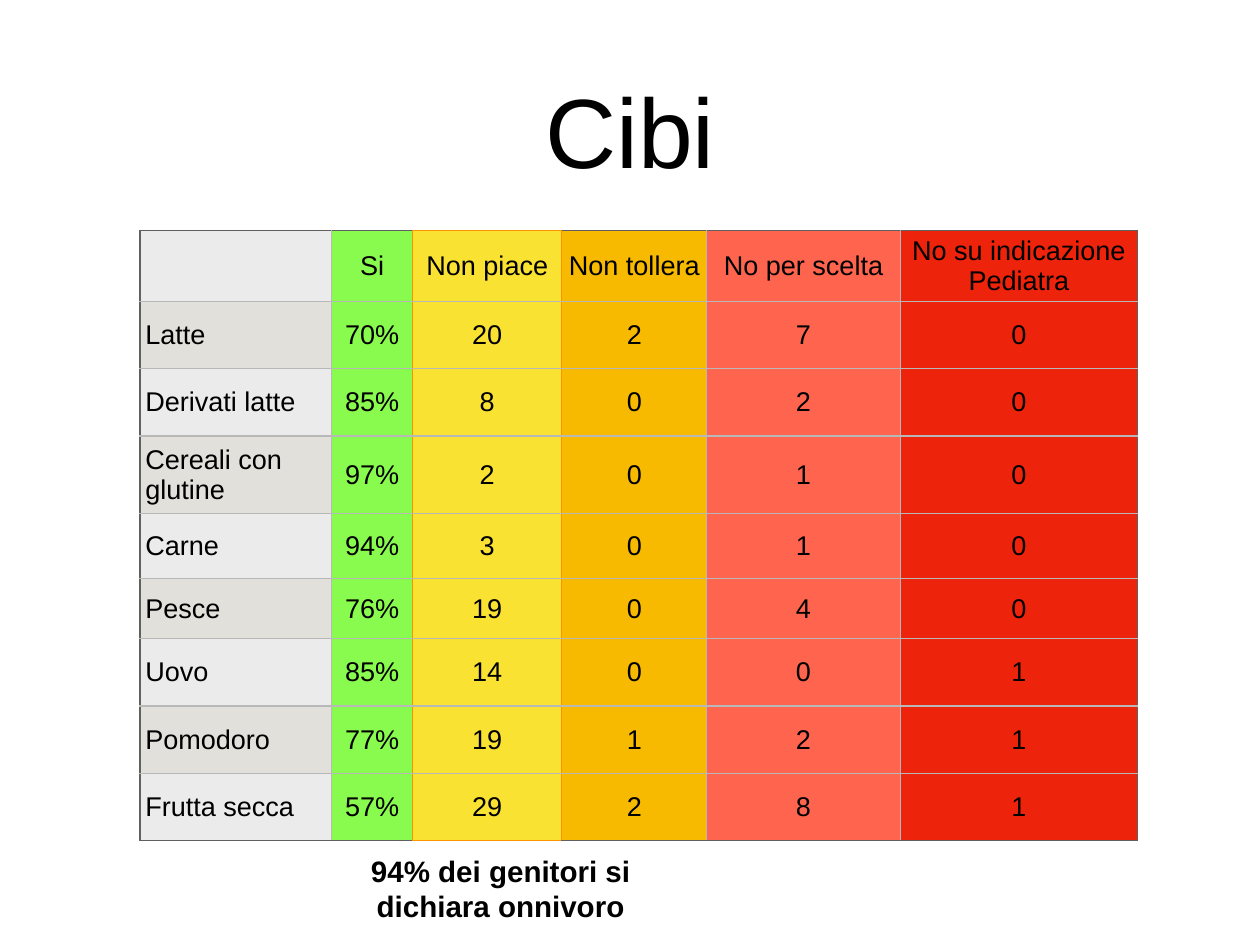
from lxml.etree import SubElement
from pptx import Presentation
from pptx.dml.color import RGBColor as RGB
from pptx.enum.text import MSO_ANCHOR as Anchor, PP_ALIGN as Align
from pptx.oxml.ns import qn
from pptx.util import Inches, Pt

COLORS = {
    "ink": "000000", "edge": "606060", "rule": "B8B8B8", "accent": "FE9301",
    "light": "EBEBEB", "shade": "E1E0DA", "yes": "89FA4E", "dislike": "FAE232",
    "intolerance": "F7BA01", "choice": "FF644E", "doctor": "EE230C",
}
ANSWER_FILLS = ["yes", "dislike", "intolerance", "choice", "doctor"]
VERTICAL_RULES = ["edge", "rule", "accent", "accent", "rule", "rule", "edge"]
COLUMN_SHARES = [15.19, 6.47, 11.81, 11.53, 15.33, 18.85]
ROW_SHARES = [7.4, 7.12, 7.12, 8.25, 6.84, 6.37, 7.12, 7.12, 7.12]
FOODS = [
    ["", "Si", "Non piace", "Non tollera", "No per scelta", "No su indicazione\vPediatra"],
    ["Latte", "70%", "20", "2", "7", "0"],
    ["Derivati latte", "85%", "8", "0", "2", "0"],
    ["Cereali con glutine", "97%", "2", "0", "1", "0"],
    ["Carne", "94%", "3", "0", "1", "0"],
    ["Pesce", "76%", "19", "0", "4", "0"],
    ["Uovo", "85%", "14", "0", "0", "1"],
    ["Pomodoro", "77%", "19", "1", "2", "1"],
    ["Frutta secca", "57%", "29", "2", "8", "1"],
]


class FoodSlide:
    font = "Arial"
    inset = Inches(0.06)

    def __init__(self, deck):
        self.deck = deck
        self.slide = deck.slides.add_slide(deck.slide_layouts[5])

    def across(self, percent):
        return round(self.deck.slide_width * percent / 100)

    def down(self, percent):
        return round(self.deck.slide_height * percent / 100)

    def area(self, left, top, width, height):
        return self.across(left), self.down(top), self.across(width), self.down(height)

    def pad(self, holder):
        holder.margin_left = holder.margin_right = self.inset
        holder.margin_top = holder.margin_bottom = self.inset
        holder.vertical_anchor = Anchor.MIDDLE

    def set_text(self, frame, text, size, align=Align.CENTER, bold=False):
        frame.text = text
        for paragraph in frame.paragraphs:
            paragraph.alignment = align
            for run in paragraph.runs:
                run.font.name = self.font
                run.font.size = Pt(size)
                run.font.bold = bold
                run.font.color.rgb = RGB.from_string(COLORS["ink"])

    def title(self, text, *area):
        heading = self.slide.shapes.title
        heading.left, heading.top, heading.width, heading.height = self.area(*area)
        self.pad(heading.text_frame)
        self.set_text(heading.text_frame, text, 80)

    def caption(self, text, right_inset, *area):
        frame = self.slide.shapes.add_textbox(*self.area(*area)).text_frame
        frame.word_wrap = True
        self.pad(frame)
        frame.margin_right = self.across(right_inset)
        self.set_text(frame, text, 24, bold=True)

    def borders(self, cell, row, column, last_row):
        outer = "accent" if column == 2 else "edge"
        sides = {
            "a:lnL": VERTICAL_RULES[column],
            "a:lnR": VERTICAL_RULES[column + 1],
            "a:lnT": outer if row == 0 else "rule",
            "a:lnB": outer if row == last_row else "rule",
        }
        properties = cell._tc.get_or_add_tcPr()
        for position, (side, color) in enumerate(sides.items()):
            line = SubElement(properties, qn(side), w=str(Pt(1)))
            fill = SubElement(line, qn("a:solidFill"))
            SubElement(fill, qn("a:srgbClr"), val=COLORS[color])
            properties.insert(position, line)

    def table(self, rows, left, top):
        area = self.area(left, top, sum(COLUMN_SHARES), sum(ROW_SHARES))
        grid = self.slide.shapes.add_table(len(rows), len(COLUMN_SHARES), *area).table
        grid.first_row = grid.horz_banding = False
        for column, share in zip(grid.columns, COLUMN_SHARES):
            column.width = self.across(share)
        for row, share in zip(grid.rows, ROW_SHARES):
            row.height = self.down(share)
        for r, answers in enumerate(rows):
            fills = ["shade" if r % 2 else "light"] + ANSWER_FILLS
            for c, (answer, color) in enumerate(zip(answers, fills)):
                cell = grid.cell(r, c)
                self.pad(cell)
                self.set_text(cell.text_frame, answer, 22, Align.CENTER if c else Align.LEFT)
                cell.fill.solid()
                cell.fill.fore_color.rgb = RGB.from_string(COLORS[color])
                self.borders(cell, r, c, len(rows) - 1)


def main():
    deck = Presentation()
    deck.slide_width, deck.slide_height = Inches(14.22), Inches(10.67)
    foods = FoodSlide(deck)
    foods.title("Cibi", 7.31, 2.62, 85.37, 22.12)
    foods.table(FOODS, 11.11, 24.37)
    foods.caption("94% dei genitori si dichiara onnivoro", 11.25, 24.33, 91.66, 41.63, 4.69)
    deck.save("out.pptx")


if __name__ == "__main__":
    main()
